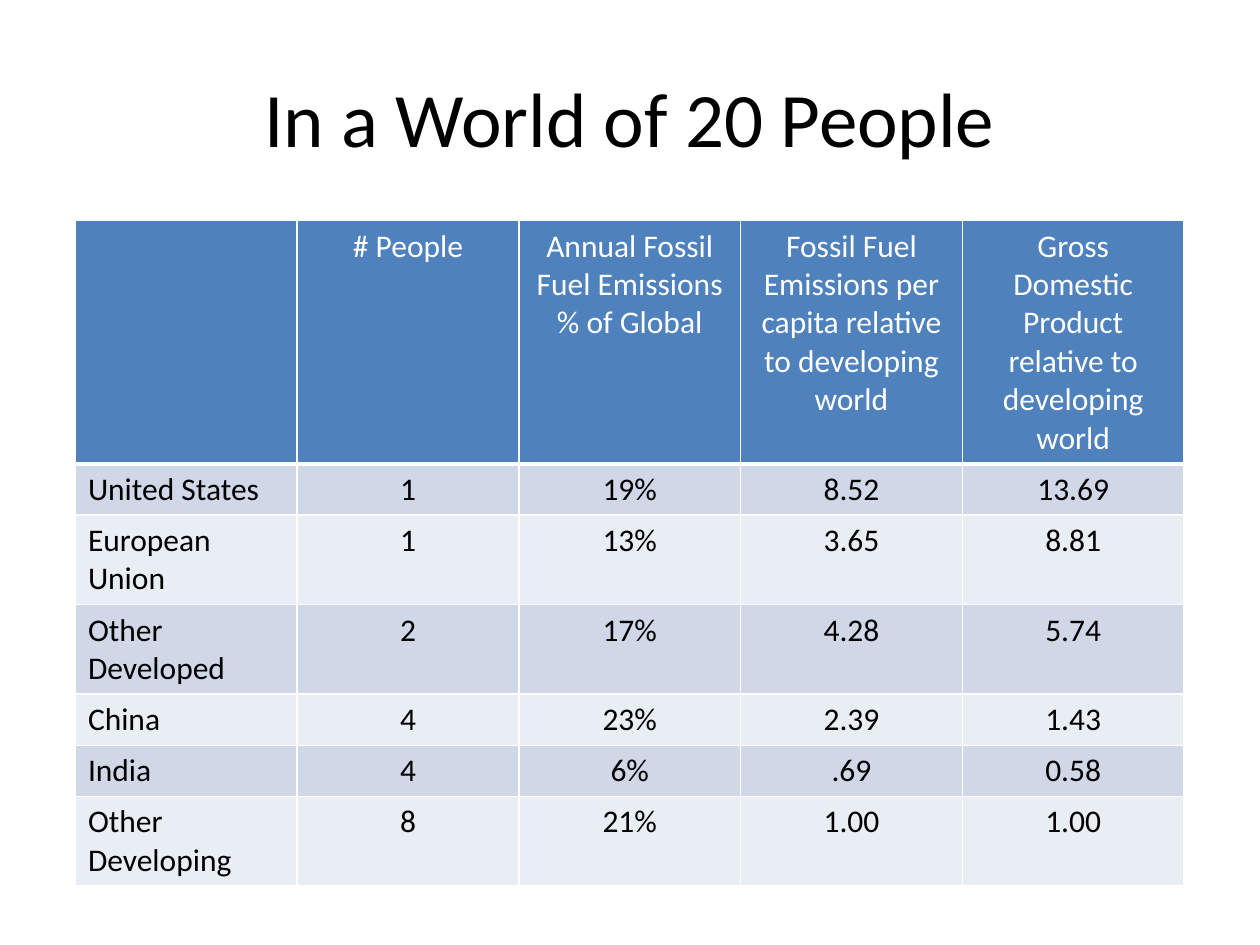
from pptx import Presentation, util as u
from pptx.dml.color import RGBColor
from pptx.enum import text as t
from pptx.oxml import parse_xml
from pptx.oxml.ns import nsdecls

FONT = "Calibri"
WHITE, BLACK, BLUE = "FFFFFF", "000000", "4F81BD"
BANDS = ("D0D8E8", "E9EDF4")
ROWS = [
    ["", "# People", "Annual Fossil Fuel Emissions % of Global",
     "Fossil Fuel Emissions per capita relative to developing world",
     "Gross Domestic Product relative to developing world"],
    ["United States", "1", "19%", "8.52", "13.69"],
    ["European Union", "1", "13%", "3.65", "8.81"],
    ["Other Developed", "2", "17%", "4.28", "5.74"],
    ["China", "4", "23%", "2.39", "1.43"],
    ["India", "4", "6%", ".69", "0.58"],
    ["Other Developing", "8", "21%", "1.00", "1.00"],
]
HIGH = [4.83, 1.03, 1.78, 1.78, 1.03, 1.03, 1.78]
WIDE = 4.47


def rgb(hue):
    return RGBColor.from_string(hue)


def style(para, size, hue, align):
    para.alignment = align
    para.font.size = u.Pt(size)
    for run in para.runs:
        font = run.font
        font.name, font.size, font.bold = FONT, u.Pt(size), False
        font.color.rgb = rgb(hue)


def edge(cell, side, width):
    line = parse_xml(
        f'<a:ln{side} {nsdecls("a")} w="{u.Pt(width)}"><a:solidFill>'
        f'<a:srgbClr val="{WHITE}"/></a:solidFill></a:ln{side}>')
    cell._tc.get_or_add_tcPr().append(line)


def add_title(slide, words):
    title = slide.shapes.title
    title.left, title.top = u.Cm(1.27), u.Cm(0.76)
    title.width, title.height = u.Cm(22.86), u.Cm(3.18)
    frame = title.text_frame
    frame.text = words
    frame.vertical_anchor = t.MSO_ANCHOR.MIDDLE
    style(frame.paragraphs[0], 44, BLACK, t.PP_ALIGN.CENTER)


def fill_cell(cell, words, row, col):
    head = row == 0
    # Borders come before the fill in the cell's XML
    for side in "LRTB":
        edge(cell, side, 3 if head and side == "B" else 1)
    cell.fill.solid()
    cell.fill.fore_color.rgb = rgb(BLUE if head else BANDS[(row - 1) % 2])
    cell.text_frame.text = words
    align = t.PP_ALIGN.CENTER if head or col else t.PP_ALIGN.LEFT
    style(cell.text_frame.paragraphs[0], 18, WHITE if head else BLACK, align)


def add_grid(slide):
    count = len(ROWS[0])
    grid = slide.shapes.add_table(
        len(ROWS), count, u.Cm(1.52), u.Cm(4.45),
        u.Cm(WIDE * count), u.Cm(sum(HIGH))).table
    for col in grid.columns:
        col.width = u.Cm(WIDE)
    for row, (line, high) in enumerate(zip(ROWS, HIGH)):
        grid.rows[row].height = u.Cm(high)
        for col, words in enumerate(line):
            fill_cell(grid.cell(row, col), words, row, col)


def main():
    deck = Presentation()
    deck.slide_width, deck.slide_height = u.Cm(25.4), u.Cm(19.05)
    # Title-only layout
    slide = deck.slides.add_slide(deck.slide_layouts[5])
    add_title(slide, "In a World of 20 People")
    # Emissions table
    add_grid(slide)
    deck.save("out.pptx")


if __name__ == "__main__":
    main()
